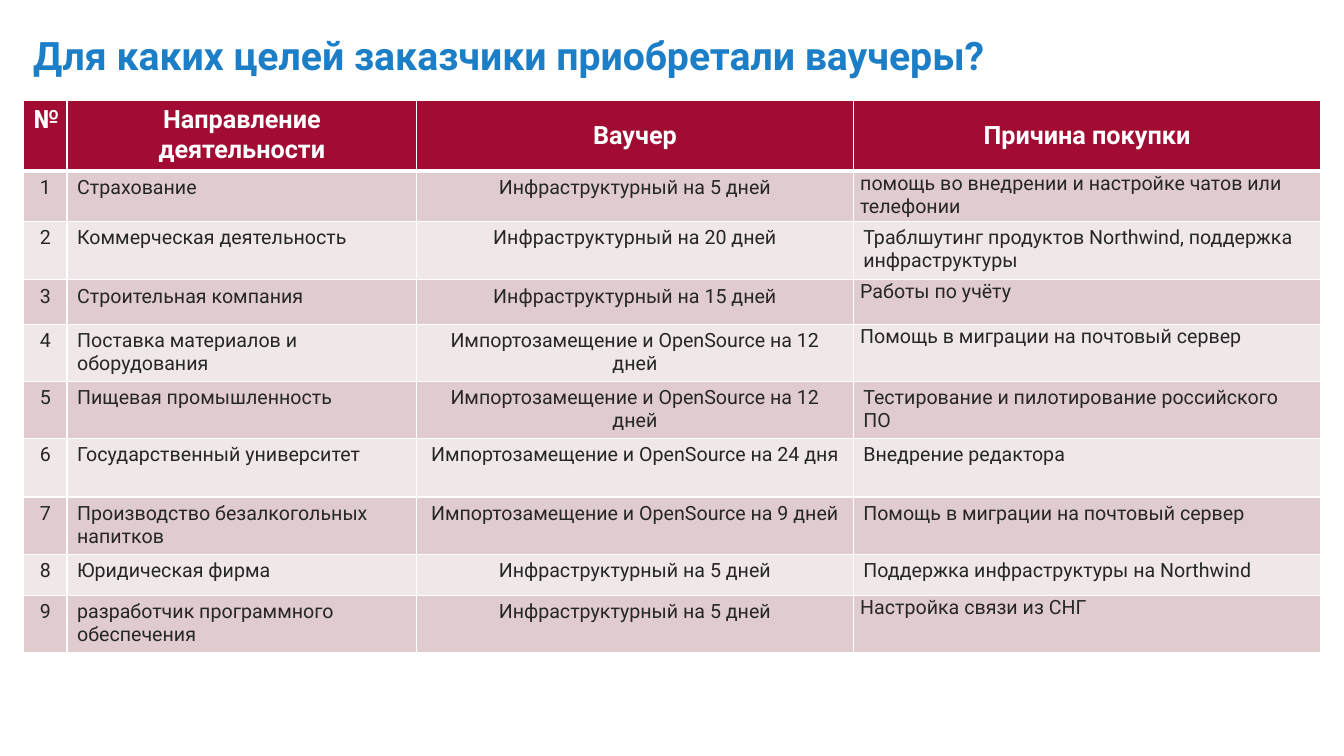
"""Build a slide with a table of the purposes customers bought vouchers for."""
from dataclasses import dataclass

from lxml import etree
from pptx import Presentation
from pptx.dml.color import RGBColor
from pptx.enum.text import MSO_ANCHOR, PP_ALIGN
from pptx.oxml.ns import qn
from pptx.slide import Slide
from pptx.table import _Cell
from pptx.text.text import TextFrame
from pptx.util import Pt

LEFT, CENTER = PP_ALIGN.LEFT, PP_ALIGN.CENTER
TOP, MIDDLE = MSO_ANCHOR.TOP, MSO_ANCHOR.MIDDLE


@dataclass(frozen=True)
class Theme:
    font: str = "Roboto"
    title_color: str = "1B7EC6"
    header_fill: str = "A20C33"
    header_text: str = "FFFFFF"
    body_text: str = "262626"
    border: str = "FFFFFF"
    bands: tuple[str, str] = ("E0CCCE", "F0E7E8")
    title_size: float = 28
    header_size: float = 18
    body_size: float = 14
    thin_line: float = 1
    thick_line: float = 3


@dataclass(frozen=True)
class Column:
    heading: str
    width: float
    align: PP_ALIGN
    heading_anchor: MSO_ANCHOR


@dataclass(frozen=True)
class Purchase:
    field: str
    voucher: str
    reason: str
    height: float
    tight: bool = False


@dataclass(frozen=True)
class TextStyle:
    size: float
    color: str
    bold: bool
    align: PP_ALIGN = LEFT


THEME = Theme()
TITLE = "Для каких целей заказчики приобретали ваучеры?"
HEADER_HEIGHT = 49.4
INFRASTRUCTURE = "Инфраструктурный на"
SUBSTITUTION = "Импортозамещение и OpenSource на"

COLUMNS = (
    Column("№", 31, CENTER, TOP),
    Column("Направление деятельности", 249.8, LEFT, TOP),
    Column("Ваучер", 311.8, CENTER, MIDDLE),
    Column("Причина покупки", 334, LEFT, MIDDLE),
)

PURCHASES = (
    Purchase("Страхование", f"{INFRASTRUCTURE} 5 дней",
             "помощь во внедрении и настройке чатов или телефонии", 36, True),
    Purchase("Коммерческая деятельность", f"{INFRASTRUCTURE} 20 дней",
             "Траблшутинг продуктов Northwind, поддержка инфраструктуры", 41.8),
    Purchase("Строительная компания", f"{INFRASTRUCTURE} 15 дней",
             "Работы по учёту", 31.7, True),
    Purchase("Поставка материалов и оборудования", f"{SUBSTITUTION} 12 дней",
             "Помощь в миграции на почтовый сервер", 40, True),
    Purchase("Пищевая промышленность", f"{SUBSTITUTION} 12 дней",
             "Тестирование и пилотирование российского ПО", 40),
    Purchase("Государственный университет", f"{SUBSTITUTION} 24 дня",
             "Внедрение редактора", 41.8),
    Purchase("Производство безалкогольных напитков", f"{SUBSTITUTION} 9 дней",
             "Помощь в миграции на почтовый сервер", 40),
    Purchase("Юридическая фирма", f"{INFRASTRUCTURE} 5 дней",
             "Поддержка инфраструктуры на Northwind", 29.3),
    Purchase("разработчик программного обеспечения", f"{INFRASTRUCTURE} 5 дней",
             "Настройка связи из СНГ", 40, True),
)


def write_text(frame: TextFrame, text: str, style: TextStyle) -> None:
    """Write one styled run into the first paragraph of a frame."""
    para = frame.paragraphs[0]
    para.alignment = style.align
    span = para.add_run()
    span.text = text
    span.font.name = THEME.font
    span.font.size = Pt(style.size)
    span.font.bold = style.bold
    span.font.color.rgb = RGBColor.from_string(style.color)


def add_borders(cell: _Cell, top: float, bottom: float) -> None:
    """Draw the four borders of a cell."""
    properties = cell._tc.get_or_add_tcPr()
    widths = {"L": THEME.thin_line, "R": THEME.thin_line, "T": top, "B": bottom}
    for side, width in widths.items():
        line = etree.SubElement(properties, qn(f"a:ln{side}"), w=str(Pt(width)))
        fill = etree.SubElement(line, qn("a:solidFill"))
        etree.SubElement(fill, qn("a:srgbClr"), val=THEME.border)


def fill_cell(cell: _Cell, color: str) -> None:
    """Fill a cell with a plain colour."""
    cell.fill.solid()
    cell.fill.fore_color.rgb = RGBColor.from_string(color)


def add_title(page: Slide) -> None:
    """Add the slide title."""
    box = page.shapes.add_textbox(Pt(16.6), Pt(22.3), Pt(753.8), Pt(63.4))
    box.text_frame.word_wrap = True
    box.text_frame.paragraphs[0].line_spacing = 0.9
    write_text(box.text_frame, TITLE,
               TextStyle(THEME.title_size, THEME.title_color, True))


def add_purchase_table(page: Slide) -> None:
    """Add the table of purchases with its header row."""
    heights = (HEADER_HEIGHT, *(purchase.height for purchase in PURCHASES))
    width = sum(column.width for column in COLUMNS)
    table = page.shapes.add_table(len(heights), len(COLUMNS), Pt(16.9), Pt(71.6),
                                  Pt(width), Pt(sum(heights))).table
    for row, height in zip(table.rows, heights):
        row.height = Pt(height)

    header_style = TextStyle(THEME.header_size, THEME.header_text, True, CENTER)
    for index, column in enumerate(COLUMNS):
        table.columns[index].width = Pt(column.width)
        cell = table.cell(0, index)
        cell.vertical_anchor = column.heading_anchor
        write_text(cell.text_frame, column.heading, header_style)
        add_borders(cell, THEME.thin_line, THEME.thick_line)
        fill_cell(cell, THEME.header_fill)

    for number, purchase in enumerate(PURCHASES, 1):
        values = (str(number), purchase.field, purchase.voucher, purchase.reason)
        top = THEME.thick_line if number == 1 else THEME.thin_line
        for index, (column, value) in enumerate(zip(COLUMNS, values)):
            cell = table.cell(number, index)
            write_text(cell.text_frame, value,
                       TextStyle(THEME.body_size, THEME.body_text, False, column.align))
            add_borders(cell, top, THEME.thin_line)
            fill_cell(cell, THEME.bands[(number - 1) % 2])
        if purchase.tight:
            reason = table.cell(number, len(COLUMNS) - 1)
            reason.margin_left = reason.margin_right = Pt(5)
            reason.margin_top = reason.margin_bottom = Pt(0.7)


def main() -> None:
    """Build and save the deck."""
    deck = Presentation()
    deck.slide_width, deck.slide_height = Pt(960), Pt(540)
    page = deck.slides.add_slide(deck.slide_layouts[6])
    add_title(page)
    add_purchase_table(page)
    deck.save("out.pptx")


if __name__ == "__main__":
    main()
